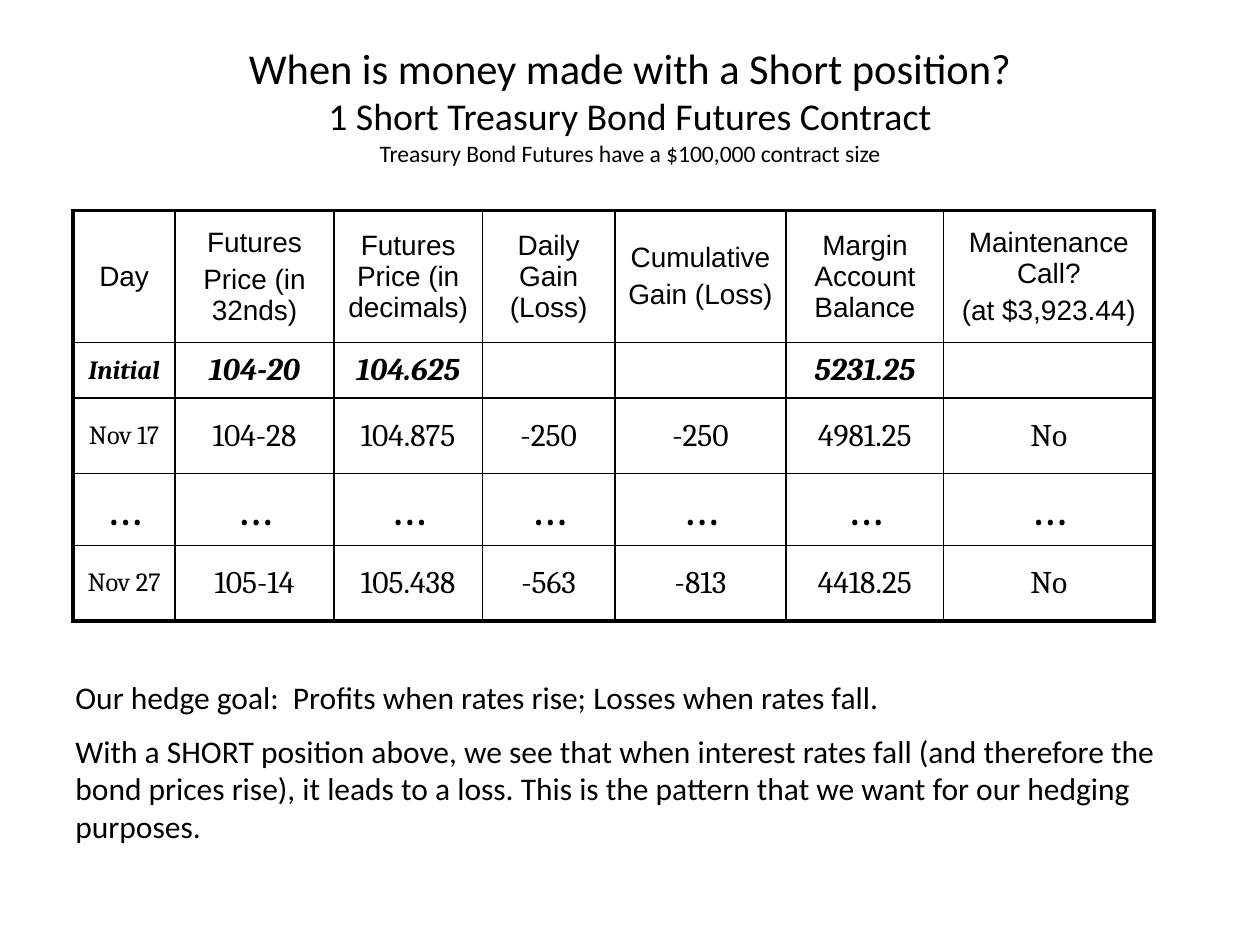
from dataclasses import dataclass

from lxml import etree
from pptx import Presentation
from pptx import util as u
from pptx.dml.color import RGBColor
from pptx.enum import text
from pptx.oxml.ns import qn

BLACK = RGBColor(0, 0, 0)
WIDTH, HEIGHT = u.Inches(10), u.Inches(7.5)
THIN, THICK = 1, 2.25

COLUMNS = (0.81, 1.26, 1.18, 1.05, 1.36, 1.25, 1.67)
ROW_HEIGHTS = (1.05, 0.44, 0.6, 0.57, 0.6)


@dataclass(frozen=True)
class Style:
    font: str
    size: float
    strong: bool = False  # bold and italic together


@dataclass(frozen=True)
class Row:
    cells: tuple[str, ...]
    day: Style
    values: Style


HEADER = Style("Arial", 16)
DOTS = Style("Cambria", 28)
DAY, VALUE = Style("Cambria", 15), Style("Cambria", 18)

ROWS = (
    Row(("Day", "Futures\nPrice (in 32nds)", "Futures Price (in decimals)",
         "Daily Gain (Loss)", "Cumulative\nGain (Loss)", "Margin Account Balance",
         "Maintenance Call?\n(at $3,923.44)"), HEADER, HEADER),
    Row(("Initial", "104-20", "104.625", "", "", "5231.25", ""),
        Style("Cambria", 15, True), Style("Cambria", 18, True)),
    Row(("Nov 17", "104-28", "104.875", "-250", "-250", "4981.25", "No"), DAY, VALUE),
    Row(("…",) * len(COLUMNS), DOTS, DOTS),
    Row(("Nov 27", "105-14", "105.438", "-563", "-813", "4418.25", "No"), DAY, VALUE),
)

TITLE = (
    ("When is money made with a Short position?", 24.3),
    ("1 Short Treasury Bond Futures Contract", 21.6),
    ("Treasury Bond Futures have a $100,000 contract size", 13.5),
)
CONCLUSIONS = (
    "Our hedge goal:  Profits when rates rise; Losses when rates fall.",
    "With a SHORT position above, we see that when interest rates fall (and therefore "
    "the bond prices rise), it leads to a loss. This is the pattern that we want for "
    "our hedging purposes.",
)


def set_font(font, style: Style) -> None:
    font.name, font.size = style.font, u.Pt(style.size)
    font.bold = font.italic = style.strong
    font.color.rgb = BLACK


def write_paragraphs(frame, lines, style: Style, align, gap: float) -> None:
    """Write one paragraph per line; gap is a share of the text size."""
    frame.text = "\n".join(lines)
    for index, para in enumerate(frame.paragraphs):
        para.alignment = align
        set_font(para.font, style)
        para.space_before = u.Pt(style.size * gap if index else 0)


def add_text_box(page, left: float, top: float, width: float, height: float):
    """Add a wrapping text box placed by shares of the slide's size."""
    box = page.shapes.add_textbox(int(WIDTH * left), int(HEIGHT * top),
                                  int(WIDTH * width), int(HEIGHT * height))
    box.text_frame.word_wrap = True
    return box


def set_borders(cell, widths: dict[str, float]) -> None:
    properties = cell._tc.get_or_add_tcPr()
    for index, (side, points) in enumerate(widths.items()):
        line = etree.Element(qn(f"a:ln{side}"), w=str(u.Pt(points)))
        fill = etree.SubElement(line, qn("a:solidFill"))
        etree.SubElement(fill, qn("a:srgbClr"), val=str(BLACK))
        properties.insert(index, line)


def add_title(page) -> None:
    frame = add_text_box(page, 0.075, 0.044, 0.85, 0.133).text_frame
    frame.vertical_anchor = text.MSO_ANCHOR.MIDDLE
    para = frame.paragraphs[0]
    para.alignment = text.PP_ALIGN.CENTER
    for index, (line, size) in enumerate(TITLE):
        if index:
            para.add_line_break()
        span = para.add_run()
        span.text = line
        set_font(span.font, Style("Calibri", size))


def add_margin_table(page) -> None:
    table = page.shapes.add_table(
        len(ROWS), len(COLUMNS), u.Inches(0.58), u.Inches(1.67),
        u.Inches(sum(COLUMNS)), u.Inches(sum(ROW_HEIGHTS))).table
    table.first_row = table.horz_banding = False
    for column, width in zip(table.columns, COLUMNS):
        column.width = u.Inches(width)
    last_row, last_column = len(ROWS) - 1, len(COLUMNS) - 1
    for r, row in enumerate(ROWS):
        table.rows[r].height = u.Inches(ROW_HEIGHTS[r])
        for c, words in enumerate(row.cells):
            cell = table.cell(r, c)
            cell.fill.background()
            cell.vertical_anchor = text.MSO_ANCHOR.MIDDLE
            write_paragraphs(cell.text_frame, words.split("\n"),
                             row.values if c else row.day, text.PP_ALIGN.CENTER, 0.2)
            set_borders(cell, {
                "L": THIN if c else THICK,
                "R": THICK if c == last_column else THIN,
                "T": THIN if r else THICK,
                "B": THICK if r == last_row else THIN,
            })


def add_conclusions(page) -> None:
    box = add_text_box(page, 0.05, 0.711, 0.892, 0.195)
    write_paragraphs(box.text_frame, CONCLUSIONS, Style("Calibri", 18),
                     text.PP_ALIGN.LEFT, 0.5)


def main() -> None:
    deck = Presentation()
    deck.slide_width, deck.slide_height = WIDTH, HEIGHT
    page = deck.slides.add_slide(deck.slide_layouts[6])
    add_title(page)
    add_margin_table(page)
    add_conclusions(page)
    deck.save("out.pptx")


if __name__ == "__main__":
    main()
